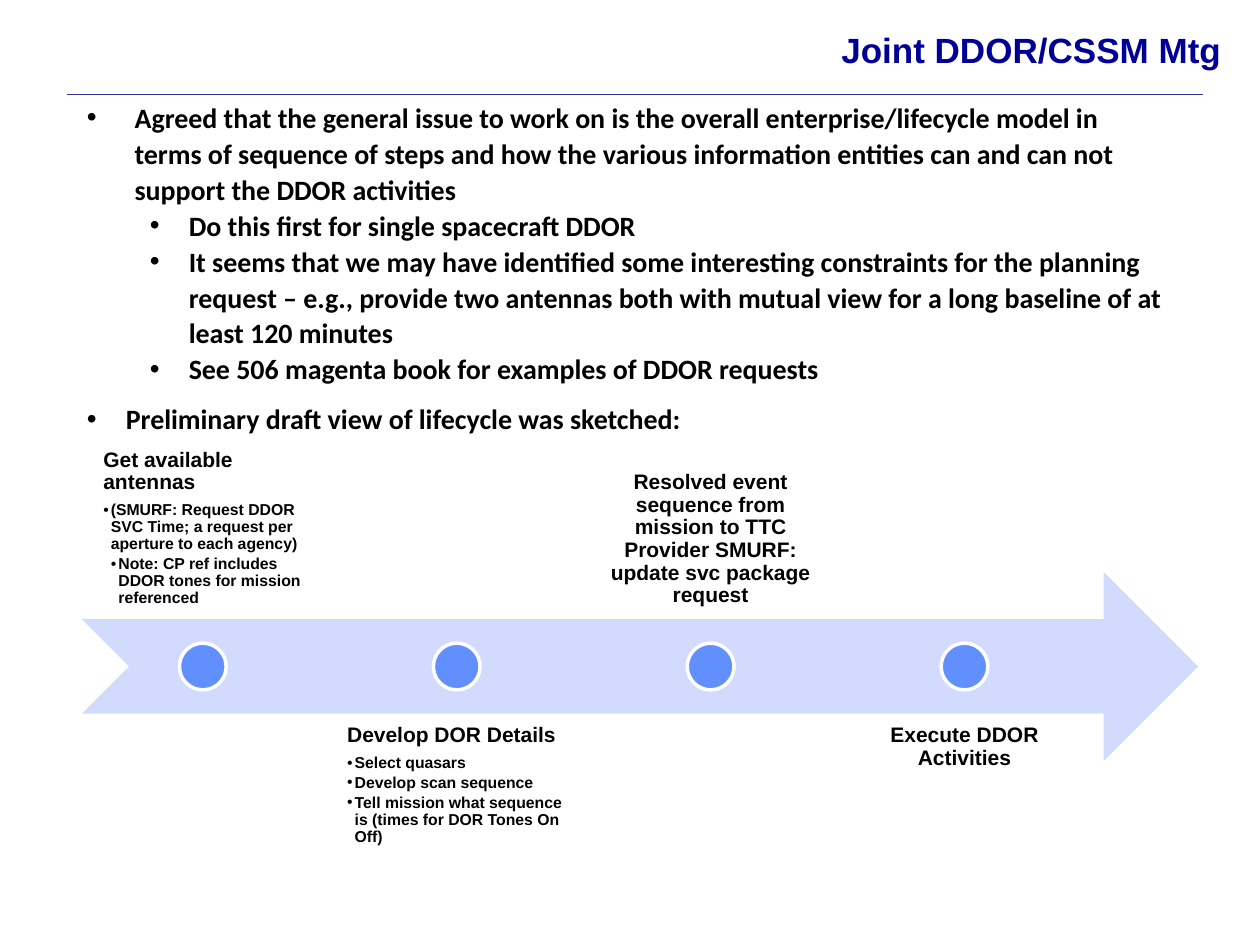
from lxml import etree
from pptx import Presentation
from pptx.dml.color import RGBColor
from pptx.enum.shapes import MSO_CONNECTOR, MSO_SHAPE
from pptx.enum.text import MSO_ANCHOR, PP_ALIGN
from pptx.oxml.ns import qn
from pptx.util import Inches, Pt

LINE = MSO_CONNECTOR.STRAIGHT
ARROW, DOT = MSO_SHAPE.NOTCHED_RIGHT_ARROW, MSO_SHAPE.OVAL
TOP, LOW = MSO_ANCHOR.TOP, MSO_ANCHOR.BOTTOM
LEFT, MID, RIGHT = PP_ALIGN.LEFT, PP_ALIGN.CENTER, PP_ALIGN.RIGHT

HUES = {"title": "000099", "rule": "333399", "text": "000000",
        "arrow": "D2DBFE", "dot": "618FFD", "edge": "FFFFFF"}

WIDE, HIGH = 10, 7.5
BAND = (0.65, 4.54, 8.86, 1.5)
COL, STEP, SIZE = 1.92, 2.015, 0.37
PAD = 0.09

# Body: text, left margin, first-line indent, space after
BODY = [
    ("Agreed that the general issue to work on is the overall enterprise/lifecycle model in "
     "terms of sequence of steps and how the various information entities can and can not "
     "support the DDOR activities", 0.38, -0.38, 0),
    ("Do this first for single spacecraft DDOR", 0.81, -0.31, 0),
    ("It seems that we may have identified some interesting constraints for the planning "
     "request – e.g., provide two antennas both with mutual view for a long baseline of at "
     "least 120 minutes", 0.81, -0.31, 0),
    ("See 506 magenta book for examples of DDOR requests", 0.81, -0.31, 8),
    ("Preliminary draft view of lifecycle was sketched:", 0.31, -0.31, 8),
]

# Steps: heading, alignment, left inset, (level, text) details
STEPS = [
    ("Get available antennas", LEFT, 0.17, [
        (1, "(SMURF: Request DDOR SVC Time; a request per aperture to each agency)"),
        (2, "Note: CP ref includes DDOR tones for mission referenced")]),
    ("Develop DOR Details", LEFT, PAD, [
        (1, "Select quasars"),
        (1, "Develop scan sequence"),
        (1, "Tell mission what sequence is (times for DOR Tones On Off)")]),
    ("Resolved event sequence from mission to TTC Provider SMURF: "
     "update svc package request", MID, PAD, []),
    ("Execute DDOR Activities", MID, PAD, []),
]


def tint(name):
    return RGBColor.from_string(HUES[name])


def add_box(shapes, x, y, w, h, anchor=TOP):
    box = shapes.add_textbox(Inches(x), Inches(y), Inches(w), Inches(h))
    frame = box.text_frame
    frame.word_wrap = True
    frame.vertical_anchor = anchor
    return frame


def add_para(frame, text, size, face="Arial", hue="text", align=LEFT,
             space=1, after=0, indent=None):
    para = frame.paragraphs[0]
    if para.text:
        para = frame.add_paragraph()
    para.text = text
    para.alignment = align
    para.line_spacing = space
    para.space_after = Pt(after)
    if indent:
        props = para._p.get_or_add_pPr()
        props.set("marL", str(Inches(indent[0])))
        props.set("indent", str(Inches(indent[1])))
        etree.SubElement(props, qn("a:buFont")).set("typeface", "Arial")
        etree.SubElement(props, qn("a:buChar")).set("char", "•")
    font = para.runs[0].font
    font.name, font.size, font.bold = face, Pt(size), True
    font.color.rgb = tint(hue)


def add_form(shapes, kind, x, y, w, h, hue, edge=None):
    form = shapes.add_shape(kind, Inches(x), Inches(y), Inches(w), Inches(h))
    form.shadow.inherit = False
    form.fill.solid()
    form.fill.fore_color.rgb = tint(hue)
    if edge:
        form.line.color.rgb = tint(edge)
        form.line.width = Pt(2)
    else:
        form.line.fill.background()


def add_rule(shapes, x, end, y):
    rule = shapes.add_connector(LINE, Inches(x), Inches(y), Inches(end), Inches(y))
    rule.line.color.rgb = tint("rule")
    rule.line.width = Pt(0.13)
    etree.SubElement(rule._element.spPr, qn("a:effectLst"))


def add_step(shapes, index, head, align, inset, details):
    left, top, _, tall = BAND
    x = left + index * STEP
    above = index % 2 == 0
    y = 3.41 if above else 5.66
    frame = add_box(shapes, x, y, COL, tall, LOW if above else TOP)
    frame.margin_left = Inches(inset)
    frame.margin_right = frame.margin_top = frame.margin_bottom = Inches(PAD)
    add_para(frame, head, 12, align=align, space=0.9, after=4.5)
    for level, text in details:
        add_para(frame, text, 9, space=0.9, after=1.5,
                 indent=(0.06 * level, -0.06))
    add_form(shapes, DOT, x + (COL - SIZE) / 2, top + (tall - SIZE) / 2,
             SIZE, SIZE, "dot", "edge")


def main():
    deck = Presentation()
    deck.slide_width, deck.slide_height = Inches(WIDE), Inches(HIGH)
    shapes = deck.slides.add_slide(deck.slide_layouts[6]).shapes

    add_rule(shapes, 0.53, 9.55, HIGH / 10)
    title = add_box(shapes, 2.9, 0.18, 6.89, 0.44)
    add_para(title, "Joint DDOR/CSSM Mtg", 20, hue="title", align=RIGHT)

    body = add_box(shapes, 0.59, 0.73, 8.78, 2.79)
    for text, margin, hang, after in BODY:
        add_para(body, text, 16, "Calibri", space=1.07, after=after,
                 indent=(margin, hang))

    flow = shapes.add_group_shape().shapes
    add_form(flow, ARROW, *BAND, "arrow")
    for index, step in enumerate(STEPS):
        add_step(flow, index, *step)

    deck.save("out.pptx")


if __name__ == "__main__":
    main()
